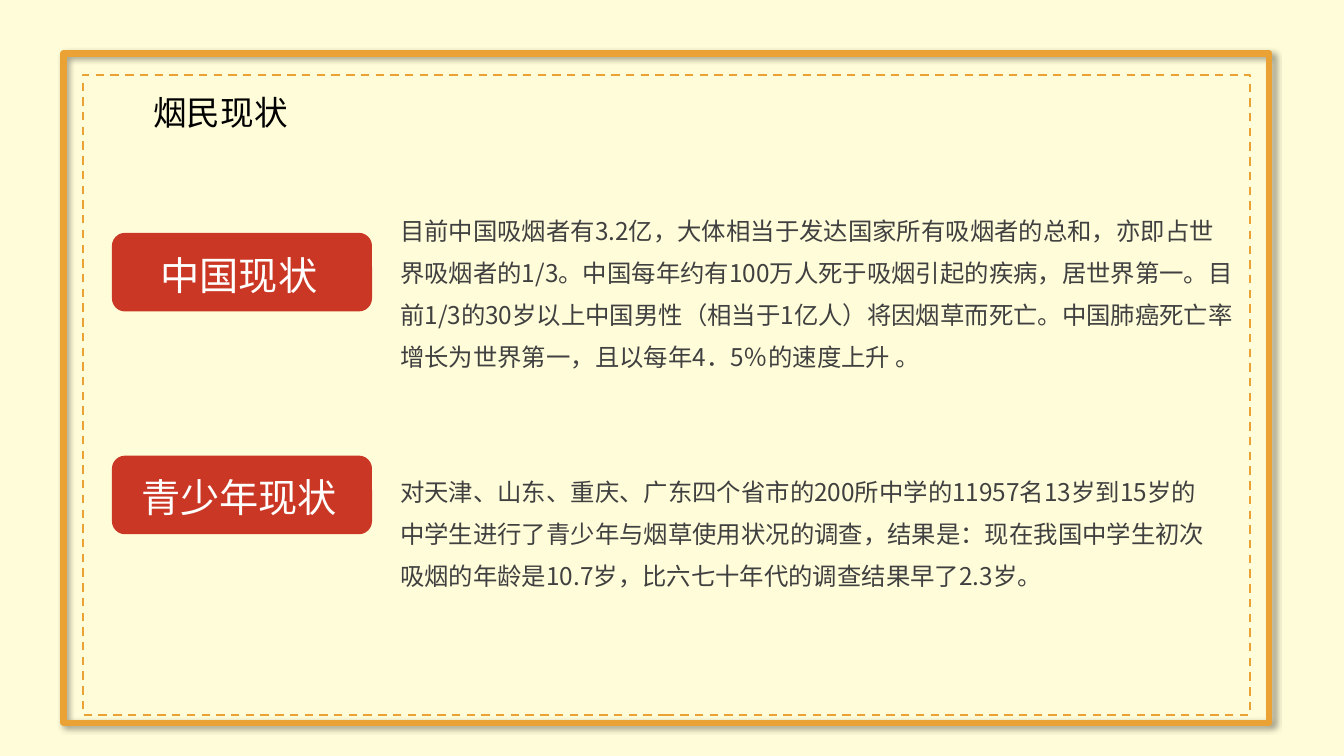
from dataclasses import dataclass
from lxml import etree
from pptx import Presentation
from pptx.dml.color import RGBColor as RGB
from pptx.enum.dml import MSO_LINE as Dash
from pptx.enum.shapes import MSO_SHAPE as Shape
from pptx.enum.text import MSO_ANCHOR as Anchor, MSO_AUTO_SIZE as Auto, PP_ALIGN as Align
from pptx.oxml import parse_xml
from pptx.oxml.ns import nsdecls, qn
from pptx.util import Inches, Pt


@dataclass(frozen=True)
class Theme:
    paper: RGB = RGB(0xFF, 0xFC, 0xD9)
    gold: RGB = RGB(0xE9, 0xA2, 0x33)
    red: RGB = RGB(0xCB, 0x37, 0x25)
    black: RGB = RGB(0, 0, 0)
    white: RGB = RGB(0xFF, 0xFF, 0xFF)
    gray: RGB = RGB(0x40, 0x40, 0x40)
    head: Pt = Pt(24)
    label: Pt = Pt(28)
    body: Pt = Pt(17.4)
    lead: Pt = Pt(30)
    latin: str = "Arial"
    hans: str = "Noto Sans CJK SC"


theme = Theme()


def write(shape, text, size, color, face, align=Align.LEFT, wrap=True):
    """Fill a text shape with one run and return its paragraph."""
    frame = shape.text_frame
    frame.word_wrap = wrap
    frame.auto_size = Auto.SHAPE_TO_FIT_TEXT
    frame.vertical_anchor = Anchor.TOP
    para = frame.paragraphs[0]
    para.alignment = align
    run = para.add_run()
    run.text = text
    run.font.size = size
    run.font.name = face
    run.font.color.rgb = color
    east = etree.SubElement(run.font._element, qn("a:ea"))
    east.set("typeface", theme.hans)
    return para


def block(kind, left, top, width, height):
    shape = slide.shapes.add_shape(
        kind, Inches(left), Inches(top), Inches(width), Inches(height))
    shape.shadow.inherit = False
    return shape


deck = Presentation()
deck.slide_width = Inches(13.33)
deck.slide_height = Inches(7.5)
slide = deck.slides.add_slide(deck.slide_layouts[5])
slide.background.fill.solid()
slide.background.fill.fore_color.rgb = theme.paper

# Title
title = slide.shapes.title
title.left, title.top = Inches(1.42), Inches(0.86)
title.width, title.height = Inches(1.55), Inches(0.5)
write(title, "烟民现状", theme.head, theme.black, theme.latin, wrap=False)

# Double border
outer = block(Shape.RECTANGLE, 0.63, 0.53, 11.96, 6.64)
inner = block(Shape.RECTANGLE, 0.82, 0.74, 11.58, 6.35)
for border, weight in ((outer, 4.5), (inner, 1.5)):
    border.fill.background()
    border.line.color.rgb = theme.gold
    border.line.width = Pt(weight)
inner.line.dash_style = Dash.DASH

glow = outer._element.spPr.find(qn("a:effectLst"))
glow.append(parse_xml(
    f'<a:outerShdw {nsdecls("a")} blurRad="{Pt(4)}" dist="{Pt(3)}" dir="2700000" '
    'algn="tl" rotWithShape="0"><a:srgbClr val="000000"><a:alpha val="40000"/>'
    '</a:srgbClr></a:outerShdw>'))

# Topics: label, label top, body top, body width, body height, body
topics = (
    ("中国现状", 2.31, 1.97, 8.48, 1.78,
     "目前中国吸烟者有3.2亿，大体相当于发达国家所有吸烟者的总和，亦即占世界吸烟者的1/3。"
     "中国每年约有100万人死于吸烟引起的疾病，居世界第一。"
     "目前1/3的30岁以上中国男性（相当于1亿人）将因烟草而死亡。"
     "中国肺癌死亡率增长为世界第一，且以每年4．5％的速度上升 。"),
    ("青少年现状", 4.52, 4.56, 8.28, 1.36,
     "对天津、山东、重庆、广东四个省市的200所中学的11957名13岁到15岁的中学生"
     "进行了青少年与烟草使用状况的调查，结果是：现在我国中学生初次吸烟的年龄是10.7岁，"
     "比六七十年代的调查结果早了2.3岁。"),
)
for label, top, start, width, height, body in topics:
    plate = block(Shape.ROUNDED_RECTANGLE, 1.11, top, 2.58, 0.78)
    plate.fill.solid()
    plate.fill.fore_color.rgb = theme.red
    plate.line.fill.background()

    name = slide.shapes.add_textbox(
        Inches(1.16), Inches(top + 0.13), Inches(2.42), Inches(0.57))
    write(name, label, theme.label, theme.white, theme.latin, Align.CENTER)

    note = slide.shapes.add_textbox(
        Inches(3.87), Inches(start), Inches(width), Inches(height))
    para = write(note, body, theme.body, theme.gray, theme.hans)
    para.line_spacing = theme.lead

deck.save("out.pptx")
